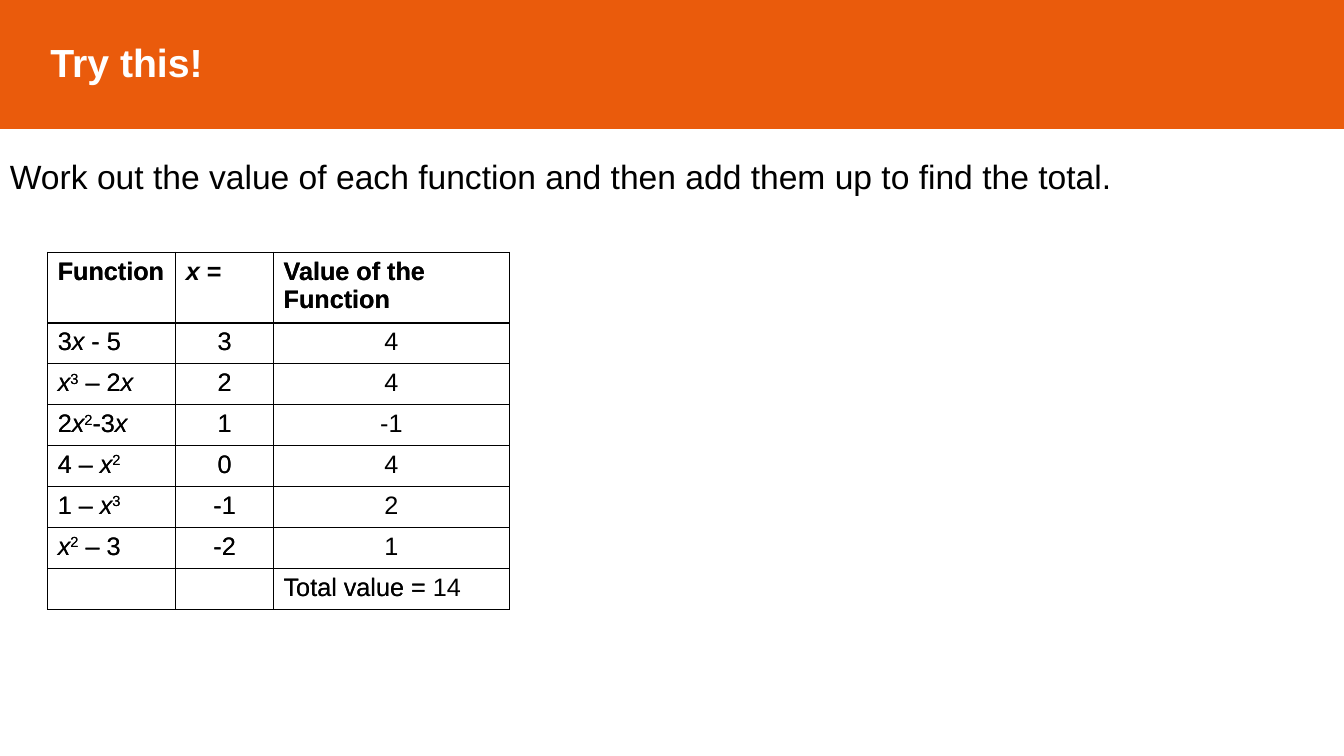
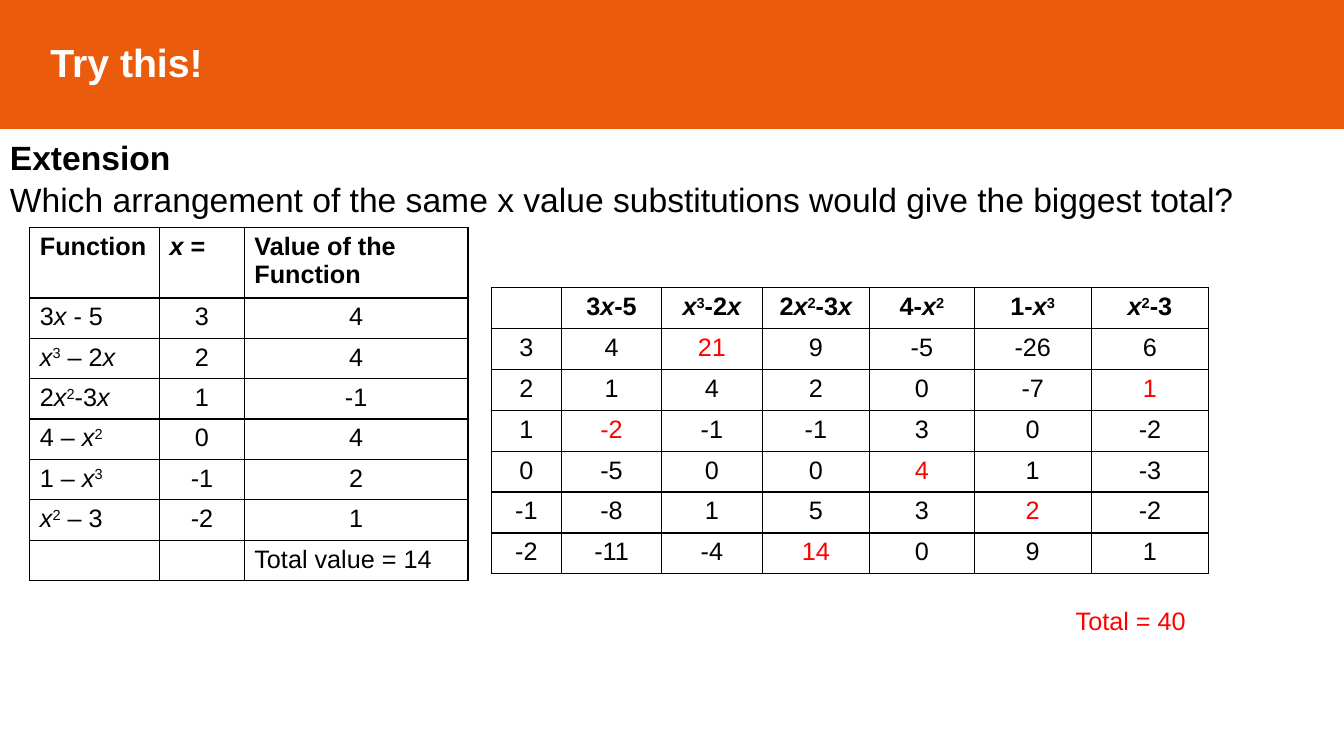
from lxml import etree
from pptx import Presentation
from pptx.dml.color import RGBColor
from pptx.enum.shapes import MSO_SHAPE
from pptx.enum.text import MSO_ANCHOR, MSO_AUTO_SIZE, PP_ALIGN
from pptx.oxml import parse_xml
from pptx.oxml.ns import nsdecls
from pptx.util import Inches, Pt

RECTANGLE = MSO_SHAPE.RECTANGLE
MIDDLE = MSO_ANCHOR.MIDDLE
FIT_SHAPE = MSO_AUTO_SIZE.SHAPE_TO_FIT_TEXT
LEFT, CENTER = PP_ALIGN.LEFT, PP_ALIGN.CENTER

ORANGE, WHITE, BLACK, RED = "EA5B0C", "FFFFFF", "000000", "FF0000"
FONT = "Arial"
color = RGBColor.from_string

presentation = Presentation()
presentation.slide_width = Inches(13.33)
presentation.slide_height = Inches(7.5)
COLUMN = presentation.slide_width / 100
ROW = presentation.slide_height / 75

BORDER = (
    f'<a:{{side}} {nsdecls("a")} w="12700"><a:solidFill>'
    f'<a:srgbClr val="{BLACK}"/></a:solidFill></a:{{side}}>'
)


def write_text(frame, text, size, text_color=BLACK, bold=False, alignment=LEFT, formula=False):
    paragraph = frame.paragraphs[0]
    paragraph.alignment = alignment
    paragraph.font.name = FONT
    paragraph.font.size = Pt(size)
    paragraph.font.bold = bold
    paragraph.font.color.rgb = color(text_color)
    before, *after = text.split("x") if formula else [text]
    if before:
        paragraph.add_run().text = before
    for part in after:
        variable = paragraph.add_run()
        variable.text = "x"
        variable.font.italic = True
        if part.startswith("^"):
            power = paragraph.add_run()
            power.text = part[1]
            power._r.get_or_add_rPr().set("baseline", "30000")
            part = part[2:]
        if part:
            paragraph.add_run().text = part


def add_grid(slide, left, top, widths, height, header_height, rows, left_cells, red_cells=()):
    frame = slide.shapes.add_table(
        len(rows), len(widths), int(left * COLUMN), int(top * ROW),
        int(sum(widths) * COLUMN), int(height * ROW),
    )
    table = frame.table
    table.first_row = False
    table.horz_banding = False
    for table_column, width in zip(table.columns, widths):
        table_column.width = int(width * COLUMN)
    body_height = (height - header_height) / (len(rows) - 1)
    for row_index, values in enumerate(rows):
        table.rows[row_index].height = int((body_height if row_index else header_height) * ROW)
        for column_index, value in enumerate(values):
            position = row_index, column_index
            cell = table.cell(*position)
            write_text(
                cell.text_frame, str(value), 18, RED if position in red_cells else BLACK,
                bold=row_index == 0, alignment=LEFT if position in left_cells else CENTER,
                formula=True,
            )
            properties = cell._tc.get_or_add_tcPr()
            for side in ("lnL", "lnR", "lnT", "lnB"):
                properties.append(parse_xml(BORDER.format(side=side)))
            etree.SubElement(properties, "{http://schemas.openxmlformats.org/drawingml/2006/main}noFill")


solved_rows = [
    ("Function", "x =", "Value of the Function"),
    ("3x - 5", 3, 4),
    ("x^3 – 2x", 2, 4),
    ("2x^2-3x", 1, -1),
    ("4 – x^2", 0, 4),
    ("1 – x^3", -1, 2),
    ("x^2 – 3", -2, 1),
    ("", "", "Total value = 14"),
]
question_rows = [
    ("Function", "", "Value of the Function"),
    *[(function, x_value, "") for function, x_value, answer in solved_rows[1:-1]],
    ("", "", "Total value ="),
]
function_left_cells = {(row, 0) for row in range(8)} | {(0, 1), (0, 2), (7, 2)}

substitution_rows = [
    ("", "3x-5", "x^3-2x", "2x^2-3x", "4-x^2", "1-x^3", "x^2-3"),
    (3, 4, 21, 9, -5, -26, 6),
    (2, 1, 4, 2, 0, -7, 1),
    (1, -2, -1, -1, 3, 0, -2),
    (0, -5, 0, 0, 4, 1, -3),
    (-1, -8, 1, 5, 3, 2, -2),
    (-2, -11, -4, 14, 0, 9, 1),
]
best_cells = {(1, 2), (2, 6), (3, 1), (4, 4), (5, 5), (6, 3)}

first_functions = (3.55, 25.04, (9.53, 7.28, 17.53), 35.4, 7)
second_functions = (2.22, 22.56, (9.66, 6.3, 16.65), 34.96, 6.96)
substitutions = (36.54, 28.54, (5.25, 7.43, 7.5, 7.98, 7.8, 8.7, 8.75), 28.4, 28.4 / 7)

slide_contents = [
    {
        "texts": [
            (0, 15, 100, 5, 24, BLACK, False,
             "Work out the value of each function and then add them up to find the total."),
        ],
        "tables": [
            (*first_functions, solved_rows, function_left_cells),
            (*first_functions, question_rows, function_left_cells),
        ],
    },
    {
        "texts": [
            (0, 17.3, 100, 5, 24, BLACK, False,
             "Which arrangement of the same x value substitutions would give the biggest total?"),
            (0, 13.1, 100, 5, 24, BLACK, True, "Extension"),
            (79.3, 59.6, 13.4, 4, 18, RED, False, "Total = 40"),
        ],
        "tables": [
            (*second_functions, solved_rows, function_left_cells),
            (*substitutions, substitution_rows, set(), best_cells),
        ],
    },
]

for content in slide_contents:
    slide = presentation.slides.add_slide(presentation.slide_layouts[6])

    band = slide.shapes.add_shape(
        RECTANGLE, 0, int(-0.5 * ROW), presentation.slide_width, int(13.2 * ROW)
    )
    band.shadow.inherit = False
    band.fill.solid()
    band.fill.fore_color.rgb = color(ORANGE)
    band.line.color.rgb = color(ORANGE)
    band.line.width = Pt(1)
    band.text_frame.margin_left = Inches(0.5)
    band.text_frame.vertical_anchor = MIDDLE
    write_text(band.text_frame, "Try this!", 28, WHITE, bold=True)

    for left, top, width, height, size, text_color, bold, text in content["texts"]:
        box = slide.shapes.add_textbox(
            int(left * COLUMN), int(top * ROW), int(width * COLUMN), int(height * ROW)
        )
        box.text_frame.word_wrap = True
        box.text_frame.auto_size = FIT_SHAPE
        write_text(box.text_frame, text, size, text_color, bold)

    for table_settings in content["tables"]:
        add_grid(slide, *table_settings)

presentation.save("out.pptx")
